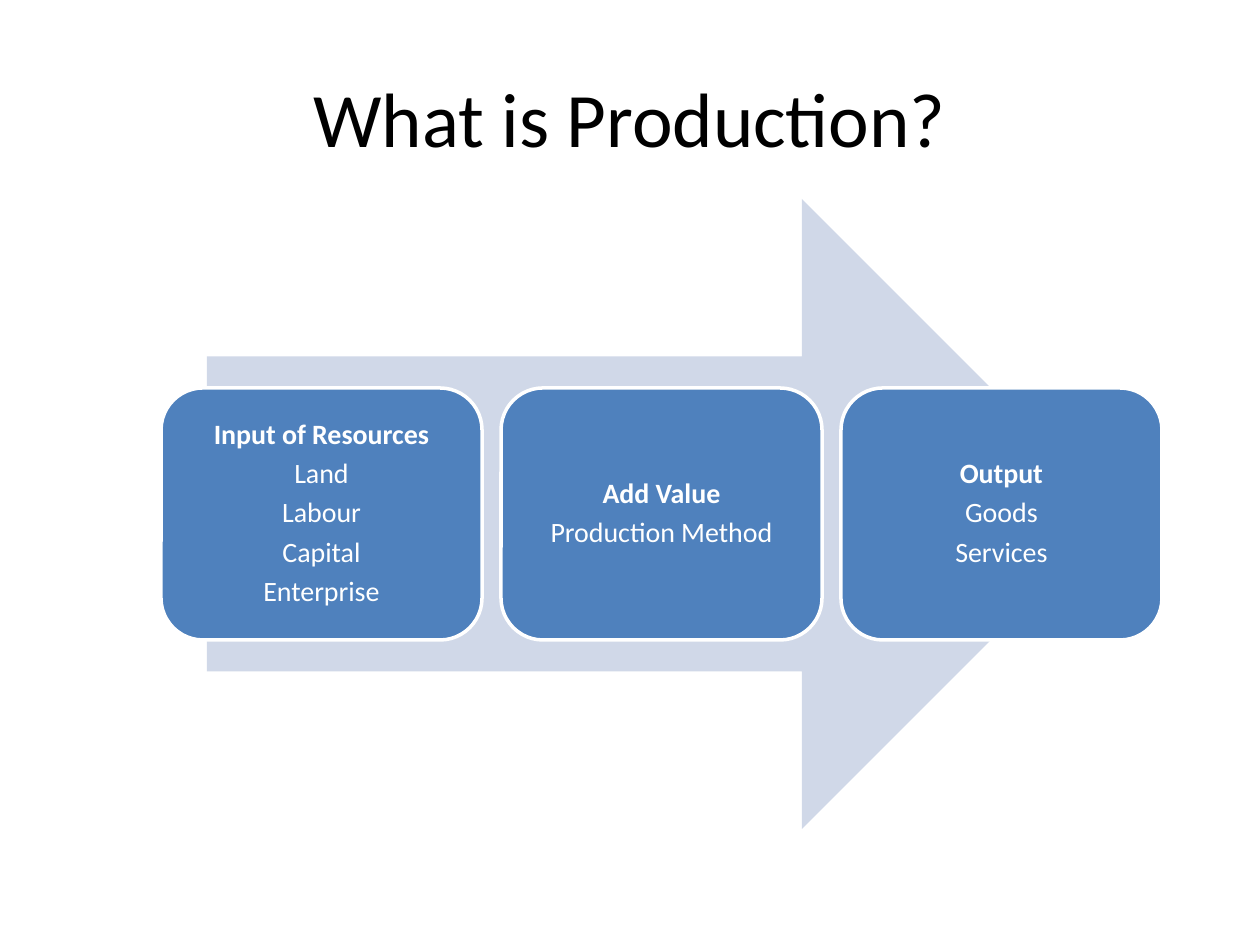
from pptx import Presentation
from pptx.dml.color import RGBColor
from pptx.enum.shapes import MSO_SHAPE
from pptx.enum.text import MSO_ANCHOR, PP_ALIGN
from pptx.util import Inches, Pt

TITLE = "What is Production?"
STAGES = [
    ("Input of Resources", ["Land", "Labour", "Capital", "Enterprise"]),
    ("Add Value", ["Production Method"]),
    ("Output", ["Goods", "Services"]),
]
THEME = {
    "font": "Calibri",
    "ink": RGBColor(0, 0, 0),
    "white": RGBColor(255, 255, 255),
    "blue": RGBColor(0x4F, 0x81, 0xBD),
    "pale": RGBColor(0xD0, 0xD8, 0xE8),
    "title": Pt(44),
    "body": Pt(16),
}
WIDE, HIGH = 1260, 945
HEAD = (63, 38, 1134, 157)
ARROW = (207, 199, 910, 630)
LEFT, WIDTH, DEPTH, GAP = 161, 321, 252, 19
INSET = 9


def px(num):
    return round(num * Inches(1) / 126)


def apply(item, **form):
    for name, value in form.items():
        setattr(item, name, value)


def place(item, area):
    apply(item, **dict(zip(("left", "top", "width", "height"), map(px, area))))


def block(slide, kind, area, tint):
    shape = slide.shapes.add_shape(kind, *map(px, area))
    shape.shadow.inherit = False
    shape.fill.solid()
    shape.fill.fore_color.rgb = tint
    shape.line.fill.background()
    return shape


def write(para, text, size, tint, bold=False):
    para.alignment = PP_ALIGN.CENTER
    run = para.add_run()
    run.text = text
    apply(run.font, name=THEME["font"], size=size, bold=bold)
    run.font.color.rgb = tint


def card(slide, area, head, items):
    shape = block(slide, MSO_SHAPE.ROUNDED_RECTANGLE, area, THEME["blue"])
    shape.line.color.rgb = THEME["white"]
    shape.line.width = Pt(2)
    frame = shape.text_frame
    apply(frame, word_wrap=True, vertical_anchor=MSO_ANCHOR.MIDDLE)
    for side in ("left", "top", "right", "bottom"):
        setattr(frame, f"margin_{side}", px(INSET))
    for row, text in enumerate([head, *items]):
        para = frame.add_paragraph() if row else frame.paragraphs[0]
        apply(para, line_spacing=0.9, space_after=Pt(5.3))
        write(para, text, THEME["body"], THEME["white"], row == 0)


def main():
    deck = Presentation()
    apply(deck, slide_width=px(WIDE), slide_height=px(HIGH))
    slide = deck.slides.add_slide(deck.slide_layouts[5])
    title = slide.shapes.title
    place(title, HEAD)
    title.text_frame.vertical_anchor = MSO_ANCHOR.MIDDLE
    write(title.text_frame.paragraphs[0], TITLE, THEME["title"], THEME["ink"])

    block(slide, MSO_SHAPE.RIGHT_ARROW, ARROW, THEME["pale"])
    top = ARROW[1] + (ARROW[3] - DEPTH) // 2
    for col, (head, items) in enumerate(STAGES):
        area = (LEFT + col * (WIDTH + GAP), top, WIDTH, DEPTH)
        card(slide, area, head, items)
    deck.save("out.pptx")


if __name__ == "__main__":
    main()
